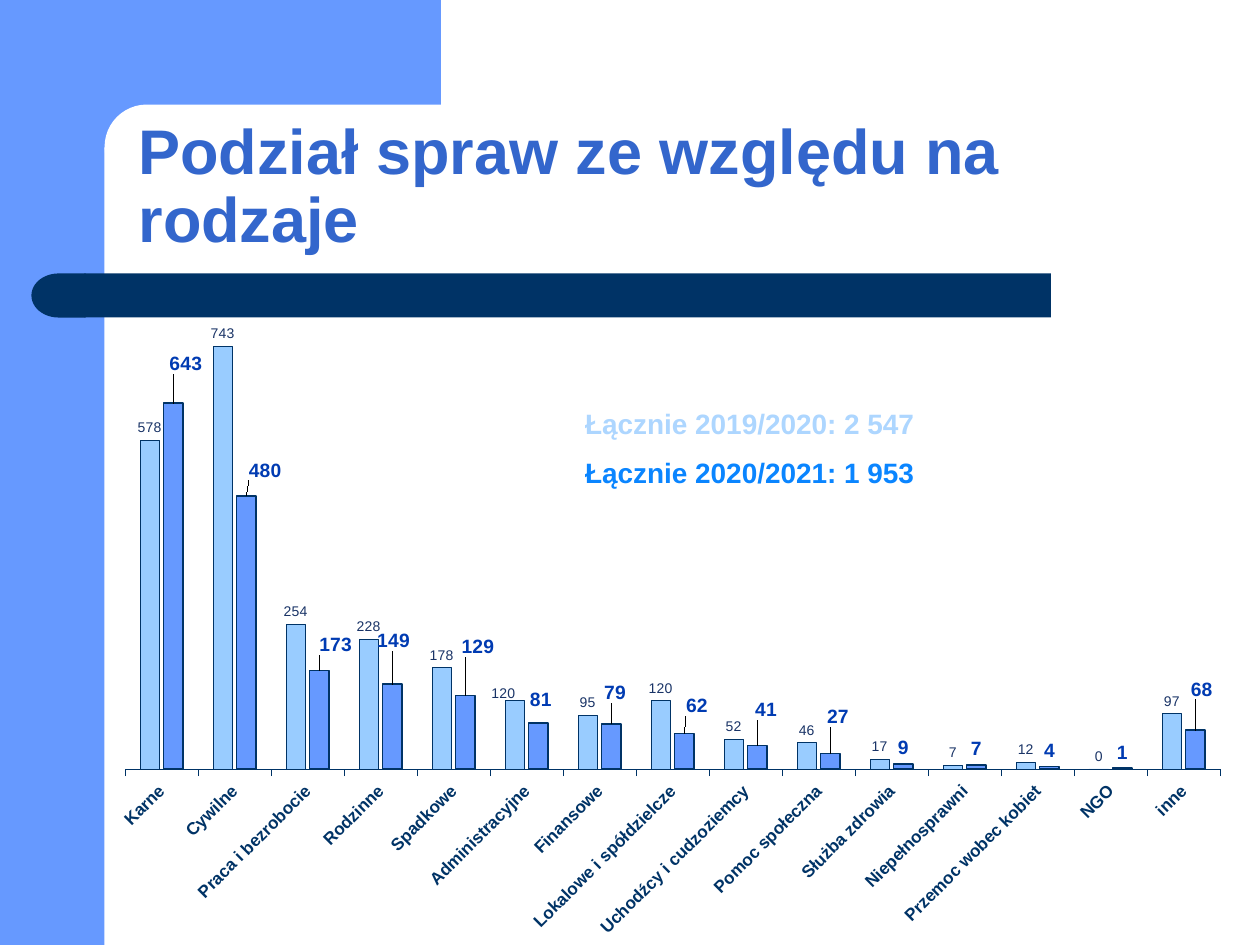
import lxml.etree
import pptx
import pptx.chart.data
import pptx.dml.color
import pptx.enum.chart
import pptx.enum.shapes
import pptx.enum.text
import pptx.oxml.ns
import pptx.util

Inches, Pt = pptx.util.Inches, pptx.util.Pt
RGBColor = pptx.dml.color.RGBColor
MSO_SHAPE = pptx.enum.shapes.MSO_SHAPE
qn = pptx.oxml.ns.qn

FONT = "Arial"
BLUE = RGBColor(0x66, 0x99, 0xFF)
NAVY = RGBColor(0x00, 0x33, 0x66)
WHITE = RGBColor(0xFF, 0xFF, 0xFF)
TITLE_BLUE = RGBColor(0x33, 0x66, 0xCC)
SKY = RGBColor(0x99, 0xCC, 0xFF)
LABEL_NAVY = RGBColor(0x19, 0x33, 0x66)
LABEL_BLUE = RGBColor(0x00, 0x3B, 0xB2)
TOTAL_PALE = RGBColor(0xAD, 0xD6, 0xFF)
TOTAL_BRIGHT = RGBColor(0x0A, 0x85, 0xFF)

CATEGORIES = [
    "Karne", "Cywilne", "Praca i bezrobocie", "Rodzinne", "Spadkowe",
    "Administracyjne", "Finansowe", "Lokalowe i spółdzielcze",
    "Uchodźcy i cudzoziemcy", "Pomoc społeczna", "Służba zdrowia",
    "Niepełnosprawni", "Przemoc wobec kobiet", "NGO", "inne",
]
CASES_2019 = [578, 743, 254, 228, 178, 120, 95, 120, 52, 46, 17, 7, 12, 0, 97]
CASES_2020 = [643, 480, 173, 149, 129, 81, 79, 62, 41, 27, 9, 7, 4, 1, 68]
SHIFTS_2019 = {5: (-0.09, 0.04)}
SHIFTS_2020 = {
    0: (0.1, -0.19), 1: (0.15, -0.08), 2: (0.13, -0.08), 3: (0.01, -0.22),
    4: (0.1, -0.26), 5: (0.02, -0.06), 6: (0.03, -0.12), 7: (0.1, -0.1),
    8: (0.07, -0.16), 9: (0.06, -0.17), 14: (0.05, -0.2),
}


def set_font(font, size, color, bold=False):
    """Give a font its face, size, colour and weight."""
    font.name, font.size, font.bold = FONT, Pt(size), bold
    font.color.rgb = color


def add_block(slide, kind, box, color):
    """Add a plain filled shape without outline or shadow."""
    sp = slide.shapes.add_shape(kind, *map(Inches, box))
    sp.shadow.inherit = False
    sp.fill.solid()
    sp.fill.fore_color.rgb = color
    sp.line.fill.background()
    return sp


def add_frame(slide, box):
    """Draw the side band, the rounded corner and the dark bar."""
    left, top, width, height = box
    add_block(slide, MSO_SHAPE.RECTANGLE, (left, top, 0.83, height), BLUE)
    add_block(slide, MSO_SHAPE.RECTANGLE, (left + 0.75, top, 2.75, 1.17), BLUE)
    corner = add_block(slide, MSO_SHAPE.ROUNDED_RECTANGLE,
                       (left + 0.83, top + 0.83, 5.58, 0.67), WHITE)
    corner.adjustments[0] = 0.5
    add_block(slide, MSO_SHAPE.RECTANGLE, (left + 0.67, top + 2.17, 7.67, 0.35), NAVY)
    cap = add_block(slide, MSO_SHAPE.FLOWCHART_DELAY,
                    (left + 0.25, top + 2.17, 0.43, 0.35), NAVY)
    cap._element.spPr.find(qn("a:xfrm")).set("flipH", "1")


def place_title(slide, box, text):
    """Move the title placeholder to the front and format it."""
    sp = slide.shapes.title
    slide.shapes._spTree.append(sp._element)
    sp.left, sp.top, sp.width, sp.height = map(Inches, box)
    tf = sp.text_frame
    tf.word_wrap = True
    tf.auto_size = pptx.enum.text.MSO_AUTO_SIZE.NONE
    tf.vertical_anchor = pptx.enum.text.MSO_ANCHOR.BOTTOM
    p = tf.paragraphs[0]
    p.alignment = pptx.enum.text.PP_ALIGN.LEFT
    p.line_spacing = 0.9
    r = p.add_run()
    r.text = text
    set_font(r.font, 36, TITLE_BLUE, True)


def add_layout(parent, index, target=None, **values):
    """Insert a manual chart layout into a chart element."""
    layout = parent.find(qn("c:layout"))
    if layout is None:
        layout = parent.makeelement(qn("c:layout"))
        parent.insert(index, layout)
    manual = lxml.etree.SubElement(layout, qn("c:manualLayout"))
    if target:
        lxml.etree.SubElement(manual, qn("c:layoutTarget")).set("val", target)
        for mode in ("xMode", "yMode"):
            lxml.etree.SubElement(manual, qn("c:" + mode)).set("val", "edge")
    for name, value in values.items():
        lxml.etree.SubElement(manual, qn("c:" + name)).set("val", f"{value:.4f}")


def format_series(series, fill, line_width, label_font, shifts, box):
    """Colour a series and place its value labels."""
    outside = pptx.enum.chart.XL_LABEL_POSITION.OUTSIDE_END
    series.format.fill.solid()
    series.format.fill.fore_color.rgb = fill
    series.format.line.color.rgb = NAVY
    series.format.line.width = Pt(line_width)
    series.invert_if_negative = False
    labels = series.data_labels
    labels.show_value = True
    labels.position = outside
    set_font(labels.font, *label_font)
    for i, (dx, dy) in shifts.items():
        label = series.points[i].data_label
        set_font(label.font, *label_font)
        label.position = outside
        element = series._element.xpath(f'c:dLbls/c:dLbl[c:idx/@val="{i}"]')[0]
        add_layout(element, 1, x=dx / box[2], y=dy / box[3])


def add_case_chart(slide, box):
    """Add the clustered columns of cases by kind."""
    data = pptx.chart.data.CategoryChartData()
    data.categories = CATEGORIES
    data.add_series("2019/2020", CASES_2019)
    data.add_series("2020/2021", CASES_2020)
    kind = pptx.enum.chart.XL_CHART_TYPE.COLUMN_CLUSTERED
    chart = slide.shapes.add_chart(kind, *map(Inches, box), data).chart
    chart.has_legend = chart.has_title = False
    set_font(chart.font, 9.5, NAVY)
    plot = chart.plots[0]
    plot.gap_width, plot.overlap, plot.vary_by_categories = 150, -20, False
    plot_area = chart._chartSpace.find(qn("c:chart")).find(qn("c:plotArea"))
    add_layout(plot_area, 0, "inner", x=0.021, y=0.072, w=0.949, h=0.615)

    axis = chart.value_axis
    axis.minimum_scale, axis.maximum_scale = 0, 800
    axis.has_major_gridlines = axis.visible = False

    axis = chart.category_axis
    axis.tick_label_position = pptx.enum.chart.XL_TICK_LABEL_POSITION.LOW
    axis.major_tick_mark = pptx.enum.chart.XL_TICK_MARK.OUTSIDE
    axis.format.line.color.rgb = NAVY
    axis.format.line.width = Pt(0.25)
    set_font(axis.tick_labels.font, 9.8, NAVY, True)
    axis._element.find(qn("c:txPr")).find(qn("a:bodyPr")).set("rot", "-2700000")

    first, second = plot.series
    format_series(first, SKY, 0.25, (8, LABEL_NAVY), SHIFTS_2019, box)
    format_series(second, BLUE, 1, (11, LABEL_BLUE, True), SHIFTS_2020, box)


def add_totals(slide, box, totals):
    """Write one centred, coloured line for each yearly total."""
    tf = slide.shapes.add_textbox(*map(Inches, box)).text_frame
    tf.word_wrap = True
    for i, (text, color) in enumerate(totals):
        p = tf.add_paragraph() if i else tf.paragraphs[0]
        p.alignment = pptx.enum.text.PP_ALIGN.CENTER
        p.space_before = Pt(8.5)
        r = p.add_run()
        r.text = text
        set_font(r.font, 16, color, True)


def main():
    """Build and save the slide."""
    prs = pptx.Presentation()
    prs.slide_width, prs.slide_height = Inches(10), Inches(7.5)
    slide = prs.slides.add_slide(prs.slide_layouts[5])
    add_frame(slide, (0, 0, 10, 7.5))
    place_title(slide, (1, 0.83, 8.75, 1.25), "Podział spraw ze względu na rodzaje")
    add_case_chart(slide, (0.8, 2.07, 9.16, 5.87))
    add_totals(slide, (4.06, 3.18, 3.78, 0.77), [
        ("Łącznie 2019/2020: 2 547", TOTAL_PALE),
        ("Łącznie 2020/2021: 1 953", TOTAL_BRIGHT),
    ])
    prs.save("out.pptx")


if __name__ == "__main__":
    main()
